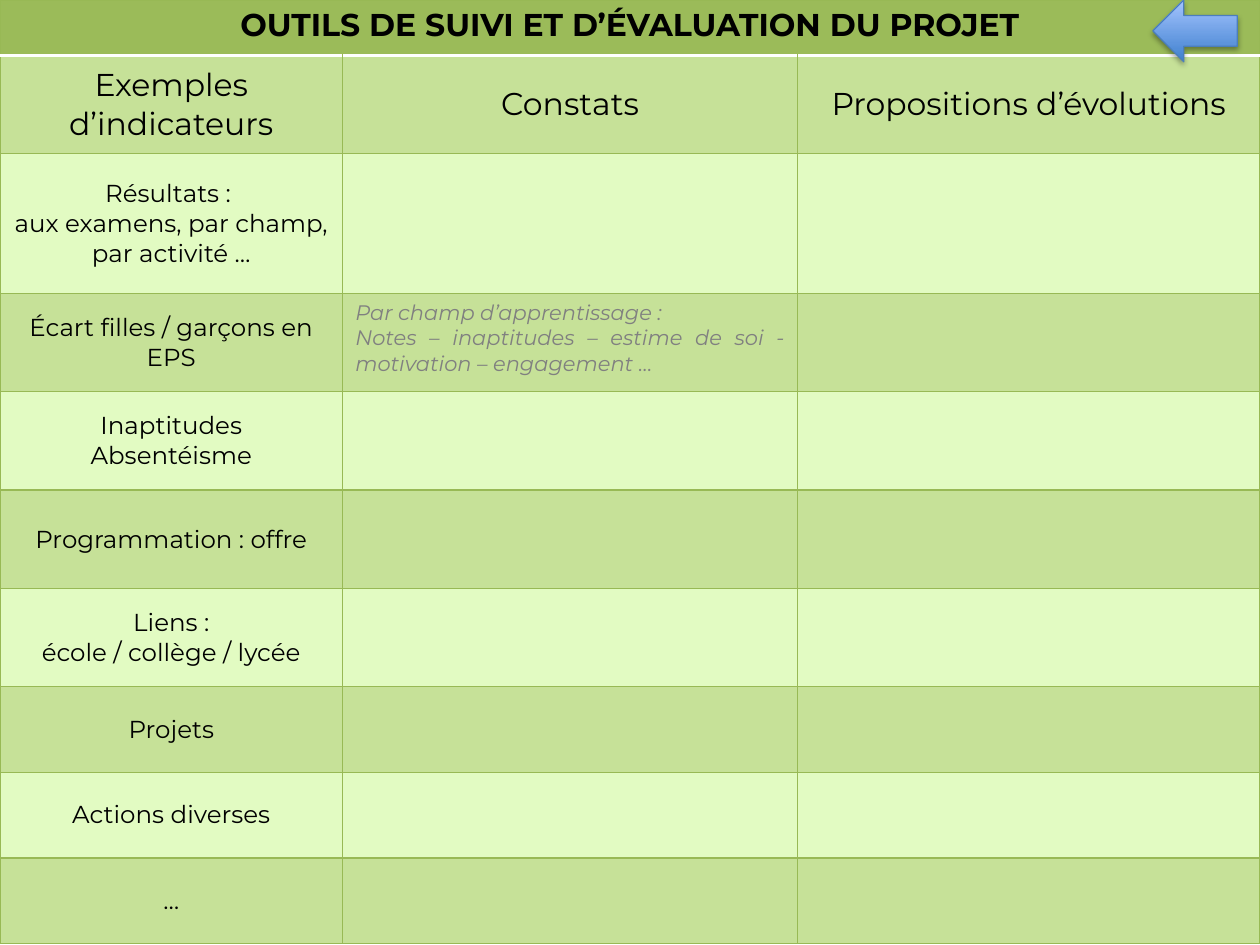
"""Build a one-slide table of project monitoring and evaluation tools."""
from lxml import etree
from pptx import Presentation
from pptx.dml.color import RGBColor
from pptx.enum.shapes import MSO_SHAPE
from pptx.enum.text import MSO_ANCHOR, PP_ALIGN
from pptx.oxml.ns import qn
from pptx.util import Inches, Pt

LEFT_ARROW = MSO_SHAPE.LEFT_ARROW
TOP, MIDDLE = MSO_ANCHOR.TOP, MSO_ANCHOR.MIDDLE
CENTER, JUSTIFY = PP_ALIGN.CENTER, PP_ALIGN.JUSTIFY

FONT = "Montserrat"
BLACK = RGBColor(0x00, 0x00, 0x00)
WHITE = RGBColor(0xFF, 0xFF, 0xFF)
GRAY = RGBColor(0x80, 0x80, 0x80)
GREEN = RGBColor(0x9B, 0xBB, 0x59)
BORDER_GREEN = RGBColor(0x98, 0xB9, 0x55)
BAND_GREEN = RGBColor(0xC6, 0xE1, 0x98)
PALE_GREEN = RGBColor(0xE2, 0xFB, 0xC2)
ARROW_DARK = RGBColor(0x3F, 0x80, 0xCE)
ARROW_LIGHT = RGBColor(0xA4, 0xC4, 0xFF)
ARROW_LINE = RGBColor(0x4B, 0x7E, 0xBC)

TITLE = "OUTILS DE SUIVI ET D’ÉVALUATION DU PROJET"
HEADINGS = ["Exemples d’indicateurs", "Constats", "Propositions d’évolutions"]
INDICATORS = [
    ("Résultats : \naux examens, par champ, par activité …", 1.11),
    ("Écart filles / garçons en EPS", 0.78),
    ("Inaptitudes\nAbsentéisme", 0.78),
    ("Programmation : offre", 0.78),
    ("Liens :\nécole / collège / lycée", 0.78),
    ("Projets", 0.68),
    ("Actions diverses", 0.68),
    ("…", 0.68),
]
GAP_ROW = 3
GAP_FINDINGS = (
    "Par champ d’apprentissage :\n"
    "Notes – inaptitudes – estime de soi - motivation – engagement …"
)
COLUMN_WIDTHS = [2.72, 3.61, 3.67]
ROW_HEIGHTS = [0.44, 0.78] + [height for _, height in INDICATORS]


def write(cell, text, size, color=BLACK, align=CENTER, anchor=MIDDLE,
          bold=False, italic=False):
    cell.text = text
    cell.vertical_anchor = anchor
    for para in cell.text_frame.paragraphs:
        para.alignment = align
        para.font.name = FONT
        para.font.size = Pt(size)
        para.font.bold = bold
        para.font.italic = italic
        para.font.color.rgb = color


def set_borders(cell, row):
    green = (BORDER_GREEN, 0.75)
    white = (WHITE, 2)
    sides = {
        "a:lnL": green,
        "a:lnR": green,
        "a:lnT": white if row == 1 else green,
        "a:lnB": white if row == 0 else green,
    }
    properties = cell._tc.get_or_add_tcPr()
    for index, (tag, (color, width)) in enumerate(sides.items()):
        line = etree.Element(qn(tag), w=str(Pt(width)))
        fill = etree.SubElement(line, qn("a:solidFill"))
        etree.SubElement(fill, qn("a:srgbClr"), val=str(color))
        properties.insert(index, line)


def row_color(row):
    if row == 0:
        return GREEN
    return BAND_GREEN if row % 2 else PALE_GREEN


def add_tools_table(slide):
    frame = slide.shapes.add_table(
        len(ROW_HEIGHTS), len(COLUMN_WIDTHS), 0, 0,
        Inches(sum(COLUMN_WIDTHS)), Inches(sum(ROW_HEIGHTS)))
    table = frame.table
    table.horz_banding = False
    for column, width in zip(table.columns, COLUMN_WIDTHS):
        column.width = Inches(width)
    for index, height in enumerate(ROW_HEIGHTS):
        table.rows[index].height = Inches(height)
        for cell in table.rows[index].cells:
            cell.fill.solid()
            cell.fill.fore_color.rgb = row_color(index)
            set_borders(cell, index)

    table.cell(0, 0).merge(table.cell(0, len(COLUMN_WIDTHS) - 1))
    write(table.cell(0, 0), TITLE, 18, anchor=TOP, bold=True)
    for column, heading in enumerate(HEADINGS):
        write(table.cell(1, column), heading, 18)
    for row, (indicator, _) in enumerate(INDICATORS, start=2):
        write(table.cell(row, 0), indicator, 14)
    write(table.cell(GAP_ROW, 1), GAP_FINDINGS, 12, GRAY, JUSTIFY, TOP, italic=True)


def add_back_arrow(slide):
    arrow = slide.shapes.add_shape(
        LEFT_ARROW, Inches(9.15), 0, Inches(0.67), Inches(0.49))
    arrow.fill.gradient()
    arrow.fill.gradient_angle = 90
    stops = zip(arrow.fill.gradient_stops, (0, 1), (ARROW_DARK, ARROW_LIGHT))
    for stop, position, color in stops:
        stop.position = position
        stop.color.rgb = color
    arrow.line.color.rgb = ARROW_LINE
    arrow.line.width = Pt(0.75)
    arrow.shadow.inherit = False
    effects = arrow._element.spPr.find(qn("a:effectLst"))
    shadow = etree.SubElement(
        effects, qn("a:outerShdw"), blurRad=str(Pt(3.1)), dist=str(Pt(1.8)),
        dir="5400000", rotWithShape="0")
    color = etree.SubElement(shadow, qn("a:srgbClr"), val=str(BLACK))
    etree.SubElement(color, qn("a:alpha"), val="35000")


def main():
    deck = Presentation()
    deck.slide_width, deck.slide_height = Inches(10), Inches(7.5)
    slide = deck.slides.add_slide(deck.slide_layouts[6])
    add_tools_table(slide)
    add_back_arrow(slide)
    deck.save("out.pptx")


if __name__ == "__main__":
    main()
